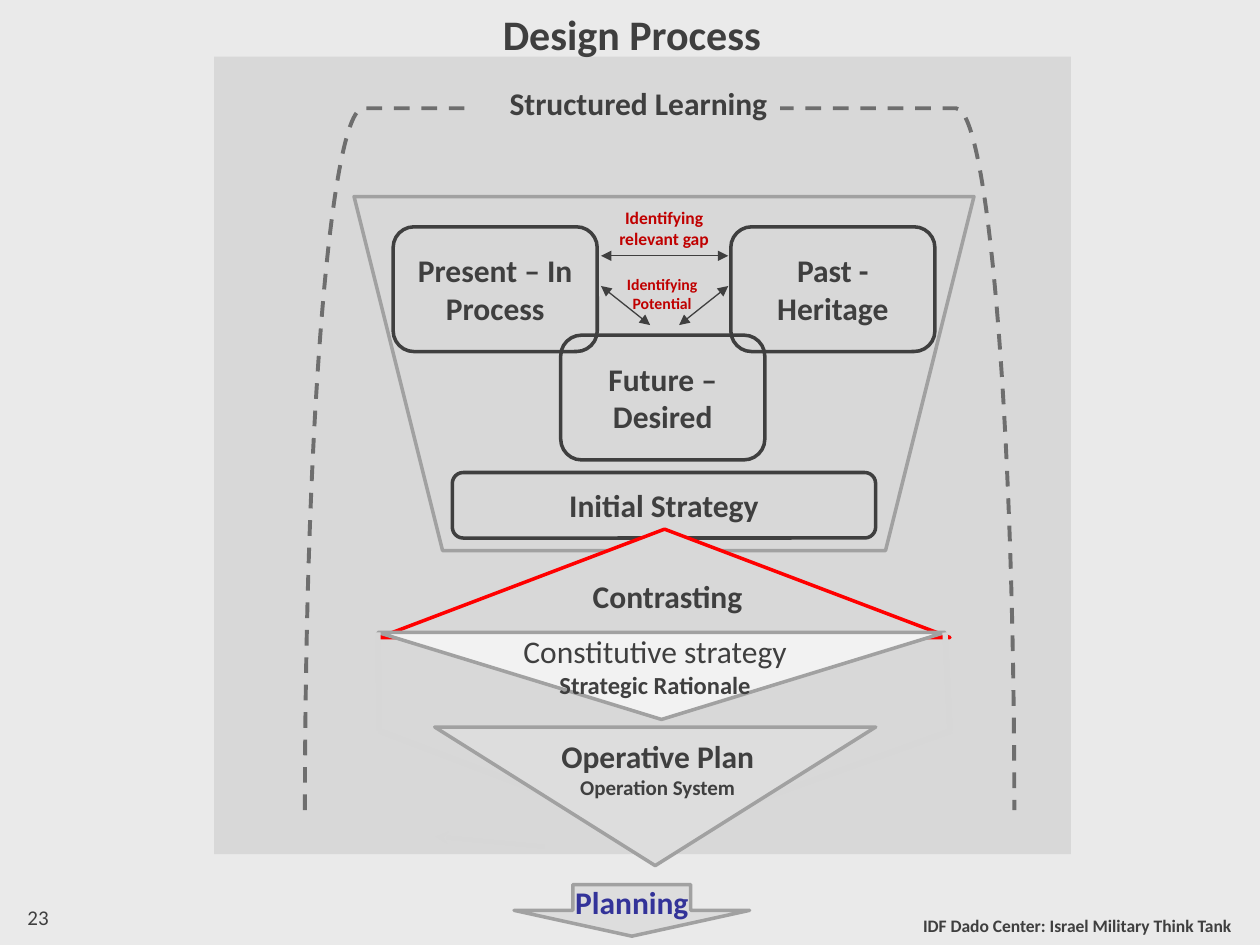
"""Build the Design Process slide: learning, strategy, operative plan and planning."""
from lxml.etree import SubElement
from pptx import Presentation
from pptx.dml.color import RGBColor
from pptx.enum.dml import MSO_LINE
from pptx.enum.shapes import MSO_CONNECTOR, MSO_SHAPE
from pptx.enum.text import MSO_ANCHOR, MSO_AUTO_SIZE, PP_ALIGN
from pptx.oxml.ns import qn
from pptx.util import Inches, Pt

BACKGROUND = RGBColor(0xEA, 0xEA, 0xEA)
PANEL = RGBColor(0xD8, 0xD8, 0xD8)
FAINT = RGBColor(0xD7, 0xD7, 0xD7)
LIGHT = RGBColor(0xF2, 0xF2, 0xF2)
SILVER = RGBColor(0xDD, 0xDD, 0xDD)
OUTLINE = RGBColor(0xA1, 0xA1, 0xA1)
BRACKET = RGBColor(0x6E, 0x6E, 0x6E)
DARK = RGBColor(0x3F, 0x3F, 0x3F)
RED = RGBColor(0xFF, 0x00, 0x00)
CRIMSON = RGBColor(0xC0, 0x00, 0x00)
BLUE = RGBColor(0x33, 0x33, 0x99)


def write_text(shape, *lines, size=18, color=DARK, bold=True, align=PP_ALIGN.CENTER,
               anchor=MSO_ANCHOR.TOP, side_margin=0.1):
    """Write lines, each a string or a (string, size, bold) tuple."""
    frame = shape.text_frame
    frame.word_wrap = True
    frame.auto_size = MSO_AUTO_SIZE.NONE
    frame.vertical_anchor = anchor
    frame.margin_left = frame.margin_right = Inches(side_margin)
    frame.margin_top = frame.margin_bottom = Inches(0.05)
    for index, line in enumerate(lines):
        text, line_size, line_bold = (line, size, bold) if isinstance(line, str) else line
        paragraph = frame.add_paragraph() if index else frame.paragraphs[0]
        paragraph.alignment = align
        run = paragraph.add_run()
        run.text = text
        run.font.name = "Calibri"
        run.font.size = Pt(line_size)
        run.font.bold = line_bold
        run.font.color.rgb = color


def add_panel(kind, position, fill=None, line=None, width=2, rotation=0, adjustments=()):
    """Add a preset shape without shadow."""
    shape = slide.shapes.add_shape(kind, *map(Inches, position))
    shape.shadow.inherit = False
    shape.rotation = rotation
    for index, value in enumerate(adjustments):
        shape.adjustments[index] = value
    if fill is None:
        shape.fill.background()
    else:
        shape.fill.solid()
        shape.fill.fore_color.rgb = fill
    if line is None:
        shape.line.fill.background()
    else:
        shape.line.color.rgb = line
        shape.line.width = Pt(width)
    return shape


presentation = Presentation()
presentation.slide_width = Inches(10)
presentation.slide_height = Inches(7.5)
slide = presentation.slides.add_slide(presentation.slide_layouts[5])
slide.background.fill.solid()
slide.background.fill.fore_color.rgb = BACKGROUND

add_panel(MSO_SHAPE.RECTANGLE, (1.7, 0.45, 6.8, 6.33), fill=PANEL)
add_panel(MSO_SHAPE.TRAPEZOID, (2.81, 1.56, 4.92, 2.81), line=OUTLINE,
          rotation=180, adjustments=[0.25])

stages = [
    ("Past - Heritage", (5.8, 1.8, 1.62, 0.99)),
    ("Present – In Process", (3.12, 1.8, 1.62, 0.99)),
    ("Future – Desired", (4.45, 2.66, 1.62, 0.99)),
    ("Initial Strategy", (3.59, 3.75, 3.36, 0.52)),
]
for text, position in stages:
    stage = add_panel(MSO_SHAPE.ROUNDED_RECTANGLE, position, line=DARK)
    write_text(stage, text, anchor=MSO_ANCHOR.MIDDLE)

gap_labels = [
    ("Identifying relevant gap", (4.88, 1.59, 0.78, 0.44), 10),
    ("Identifying Potential", (4.94, 2.13, 0.63, 0.4), 9),
]
for text, position, size in gap_labels:
    label = add_panel(MSO_SHAPE.RECTANGLE, position, fill=PANEL)
    write_text(label, text, size=size, color=CRIMSON, side_margin=0)

add_panel(MSO_SHAPE.ISOSCELES_TRIANGLE, (3.01, 4.2, 4.53, 0.86), fill=PANEL, line=RED)
add_panel(MSO_SHAPE.ISOSCELES_TRIANGLE, (3, 5.02, 4.5, 0.69), fill=LIGHT, line=OUTLINE,
          rotation=180)

both_ends = {"headEnd": "triangle", "tailEnd": "triangle"}
connectors = [
    ((4.77, 2.03, 5.78, 2.03), DARK, 0.75, both_ends),
    ((4.77, 2.27, 5.16, 2.58), DARK, 0.75, both_ends),
    ((5.78, 2.27, 5.39, 2.58), DARK, 0.75, both_ends),
    ((7.5, 5.02, 7.54, 5.8), FAINT, 3, {}),
    ((3, 5.02, 3.01, 5.8), FAINT, 3, {}),
    ((3.01, 5.8, 5.22, 6.64), FAINT, 3, {}),
    ((7.55, 5.8, 5.23, 6.63), FAINT, 3, {}),
    ((4.32, 6.72, 3.46, 6.64), FAINT, 2.25, {"tailEnd": "stealth"}),
]
for points, color, width, arrowheads in connectors:
    connector = slide.shapes.add_connector(MSO_CONNECTOR.STRAIGHT, *map(Inches, points))
    connector.line.color.rgb = color
    connector.line.width = Pt(width)
    for end, arrowhead in arrowheads.items():
        SubElement(connector.line._get_or_add_ln(), qn(f"a:{end}"), type=arrowhead)
    SubElement(connector.element.spPr, qn("a:effectLst"))

add_panel(MSO_SHAPE.ISOSCELES_TRIANGLE, (3.45, 5.77, 3.5, 1.1), fill=SILVER, line=OUTLINE,
          rotation=180)
bracket = add_panel(MSO_SHAPE.LEFT_BRACKET, (2.45, 0.83, 5.57, 5.63), line=BRACKET,
                    width=2.25, rotation=90, adjustments=[0.083])
bracket.line.dash_style = MSO_LINE.DASH
learning = add_panel(MSO_SHAPE.RECTANGLE, (3.7, 0.62, 2.49, 0.4), fill=PANEL)
write_text(learning, "Structured Learning", align=PP_ALIGN.RIGHT)
add_panel(MSO_SHAPE.DOWN_ARROW, (4.08, 7.02, 1.87, 0.41), fill=SILVER, line=OUTLINE)

captions = [
    ((4.5, 4.53, 1.49, 0.4), ["Contrasting"], {"align": PP_ALIGN.RIGHT}),
    ((4.03, 4.97, 2.34, 0.94),
     [("Constitutive strategy", 18, False), ("Strategic Rationale", 14, True)], {}),
    ((3.62, 5.8, 3.2, 0.61), ["Operative Plan", ("Operation System", 12, True)], {}),
    ((4.04, 6.96, 1.95, 0.4), ["Planning"], {"color": BLUE}),
    ((6.7, 7.21, 3.17, 0.4), ["IDF Dado Center: Israel Military Think Tank"],
     {"size": 10, "align": PP_ALIGN.RIGHT}),
    ((0.12, 7.13, 2.33, 0.4), ["23"], {"size": 12, "bold": False, "align": PP_ALIGN.LEFT}),
]
for position, lines, text_format in captions:
    caption = slide.shapes.add_textbox(*map(Inches, position))
    write_text(caption, *lines, **text_format)

title = slide.shapes.title
title.left, title.top, title.width, title.height = map(Inches, (3.71, 0.02, 2.61, 0.5))
write_text(title, "Design Process", size=24)
slide.shapes.element.append(title.element)

presentation.save("out.pptx")
